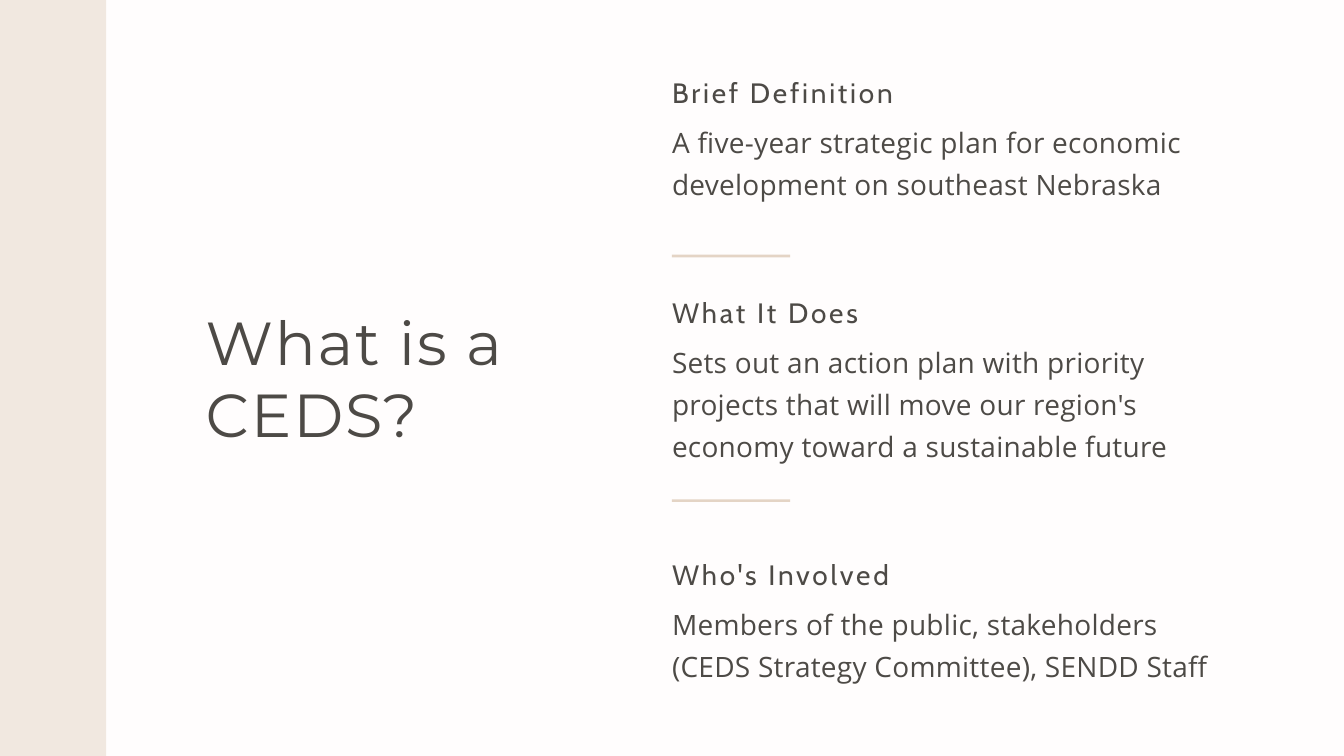
from lxml import etree
from pptx import Presentation
from pptx.dml.color import RGBColor
from pptx.enum import shapes, text
from pptx.oxml import ns
from pptx.util import Pt

# Content
TITLE = "What is a CEDS?"
PARTS = [  # top, heading, body, body height
    (80.6, "Brief Definition",
     "A five-year strategic plan for economic development on southeast Nebraska", 88),
    (316.8, "What It Does",
     "Sets out an action plan with priority projects that will move our "
     "region's economy toward a sustainable future", 132.5),
    (597, "Who's Involved",
     "Members of the public, stakeholders (CEDS Strategy Committee), SENDD Staff", 88),
]
RULES = [272.9, 535]  # tops of the dividers

# Look
PAPER = RGBColor(0xFF, 0xFD, 0xFD)
INK = RGBColor(0x4D, 0x4A, 0x46)
SAND = RGBColor(0xE4, 0xD4, 0xC5)
HEAD = {"name": "Cabin", "size": Pt(30)}
BODY = {"name": "Open Sans", "size": Pt(30)}
MAIN = {"name": "Montserrat", "size": Pt(65)}

# Layout
WIDE, HIGH = 1440, 810
LEFT, COL = 720, 612.7
DROP = 44.5  # heading top to body top

deck = Presentation()
deck.slide_width, deck.slide_height = Pt(WIDE), Pt(HIGH)
slide = deck.slides.add_slide(deck.slide_layouts[6])
slide.background.fill.solid()
slide.background.fill.fore_color.rgb = PAPER


def add_text(words, box, look, lead, track):
    frame = slide.shapes.add_textbox(*map(Pt, box)).text_frame
    form = {"word_wrap": True, "auto_size": text.MSO_AUTO_SIZE.SHAPE_TO_FIT_TEXT,
            "margin_left": 0, "margin_top": 0, "margin_right": 0, "margin_bottom": 0}
    for key, val in form.items():
        setattr(frame, key, val)
    para = frame.paragraphs[0]
    para.line_spacing = Pt(lead)
    run = para.add_run()
    run.text = words
    for key, val in look.items():
        setattr(run.font, key, val)
    run.font.color.rgb = INK
    run.font._element.set("spc", str(round(track * 100)))


def add_bar(box):
    bar = slide.shapes.add_shape(shapes.MSO_SHAPE.RECTANGLE, *map(Pt, box))
    bar.shadow.inherit = False
    bar.fill.solid()
    bar.fill.fore_color.rgb = SAND
    bar.line.fill.background()
    return bar


# Headings and bodies
for top, head, body, tall in PARTS:
    add_text(head, (LEFT, top, COL, 36), HEAD, 36, 3)
    add_text(body, (LEFT, top + DROP, COL, tall), BODY, 45, 0.3)

# Dividers
for top in RULES:
    add_bar((LEFT, top, 126.7, 2.9))

# Half-clear side band, bleeding over the slide edge
band = add_bar((-32.4, -37.4, 146.2, 884.9))
tint = band.fill._xPr.find(ns.qn("a:solidFill")).find(ns.qn("a:srgbClr"))
etree.SubElement(tint, ns.qn("a:alpha")).set("val", "50000")

# Title
add_text(TITLE, (220.3, 326.2, 444.2, 157), MAIN, 78, 1.9)

deck.save("out.pptx")
